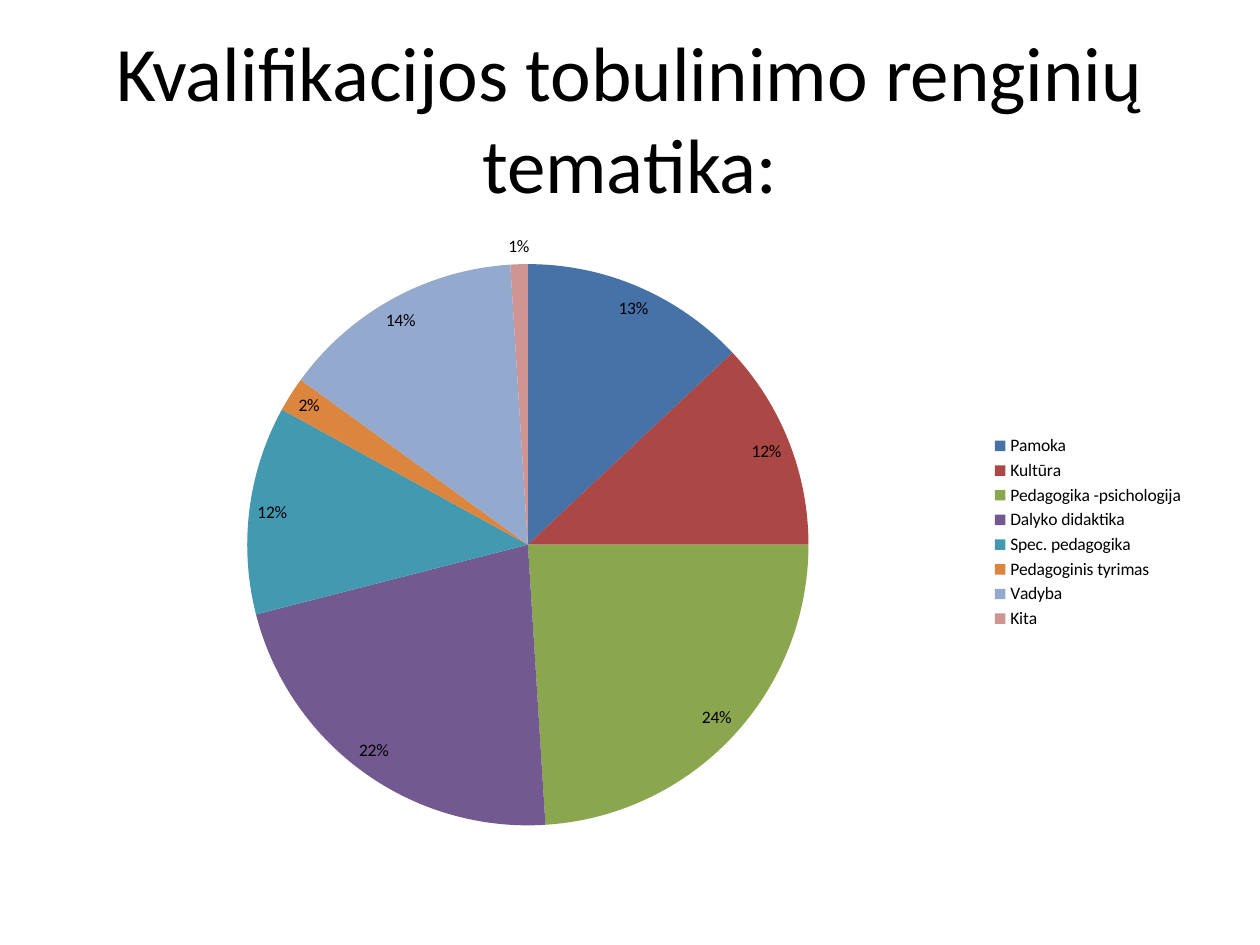
from lxml.etree import SubElement
from pptx import Presentation
from pptx.chart.data import CategoryChartData as ChartData
from pptx.dml.color import RGBColor
from pptx.enum.chart import XL_CHART_TYPE as ChartType
from pptx.enum.chart import XL_LABEL_POSITION as LabelPosition
from pptx.enum.chart import XL_LEGEND_POSITION as LegendPosition
from pptx.enum.text import MSO_ANCHOR as Anchor
from pptx.enum.text import PP_ALIGN as Align
from pptx.oxml.ns import qn
from pptx.util import Pt

FONT = "Calibri"
BLACK = "000000"
TOPICS = [
    ("Pamoka", 13, "4672A8"),
    ("Kultūra", 12, "AB4744"),
    ("Pedagogika -psichologija", 24, "8AA64F"),
    ("Dalyko didaktika", 22, "725990"),
    ("Spec. pedagogika", 12, "4299B0"),
    ("Pedagoginis tyrimas", 2, "DC853E"),
    ("Vadyba", 14, "93A9CE"),
    ("Kita", 1, "D09493"),
]
PLOT_AREA = {"x": 0.16, "y": 0.07, "w": 0.5, "h": 0.9}


def color(hex_value):
    return RGBColor.from_string(hex_value)


def apply_format(target, values):
    for name, value in values.items():
        setattr(target, name, value)


def style_font(font, size):
    apply_format(font, {"name": FONT, "size": Pt(size)})
    font.color.rgb = color(BLACK)


def add_title(page, text, left, top, width, height):
    box = page.shapes.add_textbox(Pt(left), Pt(top), Pt(width), Pt(height))
    apply_format(box.text_frame, {"word_wrap": True, "vertical_anchor": Anchor.MIDDLE})
    para = box.text_frame.paragraphs[0]
    para.alignment = Align.CENTER
    span = para.add_run()
    span.text = text
    style_font(span.font, 44)


def place_plot(chart, area):
    plot_area = chart.plots[0]._element.getparent()
    for layout in plot_area.findall(qn("c:layout")):
        plot_area.remove(layout)
    layout = plot_area.makeelement(qn("c:layout"))
    plot_area.insert(0, layout)
    manual = SubElement(layout, qn("c:manualLayout"))
    settings = {"layoutTarget": "inner", "xMode": "edge", "yMode": "edge", **area}
    for name, value in settings.items():
        SubElement(manual, qn(f"c:{name}")).set("val", str(value))


def add_pie(page, topics, left, top, width, height):
    names, shares, fills = zip(*topics)
    data = ChartData()
    data.categories = names
    data.add_series("Series 1", shares)
    chart = page.shapes.add_chart(
        ChartType.PIE, Pt(left), Pt(top), Pt(width), Pt(height), data
    ).chart
    style_font(chart.font, 10)
    apply_format(chart, {"has_title": False, "has_legend": True})
    apply_format(
        chart.legend, {"position": LegendPosition.RIGHT, "include_in_layout": False}
    )
    plot = chart.plots[0]
    apply_format(plot, {"vary_by_categories": True, "has_data_labels": True})
    apply_format(
        plot.data_labels,
        {
            "show_percentage": True,
            "show_value": False,
            "number_format": "0%",
            "number_format_is_linked": False,
            "position": LabelPosition.BEST_FIT,
        },
    )
    style_font(plot.data_labels.font, 10)
    for index, fill in enumerate(fills):
        slice_fill = plot.series[0].points[index].format.fill
        slice_fill.solid()
        slice_fill.fore_color.rgb = color(fill)
    place_plot(chart, PLOT_AREA)


def main():
    deck = Presentation()
    apply_format(deck, {"slide_width": Pt(720), "slide_height": Pt(540)})
    page = deck.slides.add_slide(deck.slide_layouts[6])
    add_title(page, "Kvalifikacijos tobulinimo renginių tematika:", 36, 21.6, 648, 90)
    add_pie(page, TOPICS, 36, 126, 648, 356.4)
    deck.save("out.pptx")


if __name__ == "__main__":
    main()
